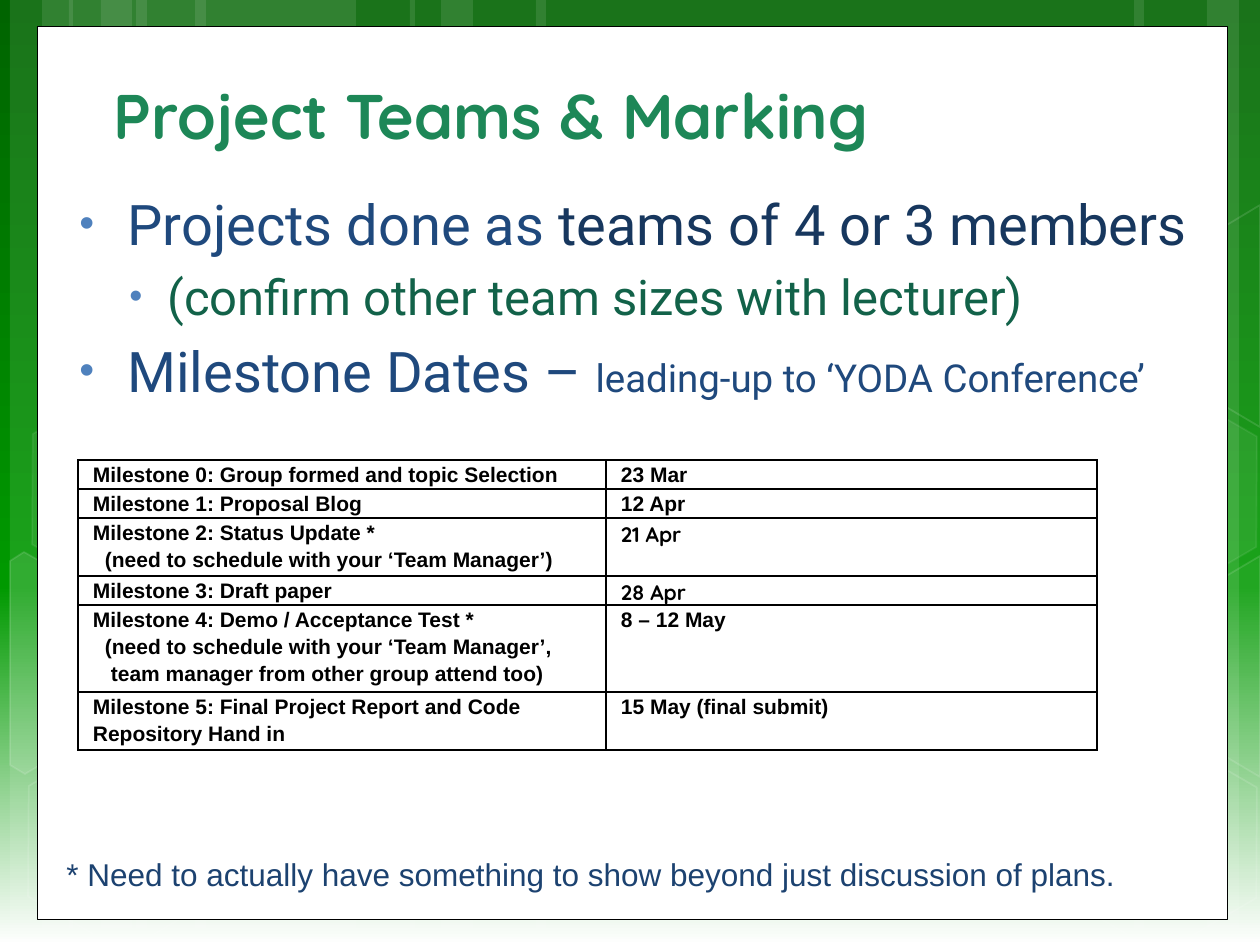
from lxml import etree
from pptx import Presentation, util as u
from pptx.dml import color
from pptx.enum import shapes, text
from pptx.oxml import ns

EMU = 914400 / 126
WHITE = "FFFFFF"

BARS = [(136, 220), (10, 63), (42, 105), (195, 220), (69, 63), (101, 105),
        (924, 220), (1207, 53), (1134, 105), (536, 388), (410, 63), (441, 105)]
HEXAGONS = [(14, 745, 0, 12), (18, 393, 7, 8), (1051, 747, 0, 12), (1051, 396, 7, 8)]
CUT_HEXAGONS = [
    ([(10, 561), (24, 552), (121, 607), (120, 718), (25, 774), (10, 765)], 10),
    ([(1167, 611), (1260, 556), (1260, 777), (1167, 722)], 4),
    ([(1167, 261), (1260, 205), (1260, 427), (1167, 372)], 0),
]
BULLETS = [
    (0, 32, [("Projects done as ", "1F497D", 32), ("teams of 4 or 3 members", "17375E", 32)]),
    (1, 28, [("(confirm other team sizes with lecturer)", "126249", 28)]),
    (0, 32, [("Milestone Dates – ", "1F497D", 32),
             ("leading-up to ‘YODA Conference’", "1F497D", 22)]),
]
MILESTONES = [
    (["Milestone 0: Group formed and topic Selection"], "23 Mar", "Arial", 1),
    (["Milestone 1: Proposal Blog"], "12 Apr", "Arial", 1),
    (["Milestone 2: Status Update *", "(need to schedule with your ‘Team Manager’)"],
     "21 Apr", "Quicksand", 2),
    (["Milestone 3: Draft paper"], "28 Apr", "Quicksand", 1),
    (["Milestone 4: Demo / Acceptance Test *", "(need to schedule with your ‘Team Manager’,",
      "team manager from other group attend too)"], "8 – 12 May", "Arial", 3),
    (["Milestone 5: Final Project Report and Code Repository Hand in"],
     "15 May (final submit)", "Arial", 2),
]


def px(n):
    """Turn pixels into EMU."""
    return u.Emu(round(n * EMU))


def rgb(value):
    """Turn a hex string into a colour."""
    return color.RGBColor.from_string(value)


def child(parent, tag, **attrs):
    """Append a DrawingML element."""
    el = etree.SubElement(parent, ns.qn(tag))
    for key, value in attrs.items():
        el.set(key, str(value))
    return el


def style(sp, fill=None, line=None, width=1, opacity=()):
    """Set fill, line and the opacity percentages of the colours used, in order."""
    sp.shadow.inherit = False
    for part, value in ((sp.fill, fill), (sp.line.fill, line)):
        if value:
            part.solid()
            part.fore_color.rgb = rgb(value)
        else:
            part.background()
    if line:
        sp.line.width = u.Pt(width)
    colors = sp.element.spPr.iter(ns.qn("a:srgbClr"))
    for el, percent in zip(list(colors), opacity):
        child(el, "a:alpha", val=percent * 1000)


def set_font(target, name, size, value, bold=False):
    """Format the font of a paragraph or run."""
    f = target.font
    f.name, f.size, f.bold = name, u.Pt(size), bold
    f.color.rgb = rgb(value)


def add_box(s, kind, x, y, w, h):
    """Add a preset shape."""
    return s.shapes.add_shape(kind, px(x), px(y), px(w), px(h))


def add_polygon(s, points):
    """Add a closed outline through points."""
    fb = s.shapes.build_freeform(*points[0], scale=EMU)
    fb.add_line_segments(points[1:], close=True)
    return fb.convert_to_shape()


def add_backdrop(s, w, h):
    """Draw the green gradient, the translucent pattern and the white panel."""
    fill = s.background.fill
    fill.gradient()
    fill.gradient_angle = 270
    stops = s.element.find(".//" + ns.qn("a:gsLst"))
    for el in list(stops):
        stops.remove(el)
    for pos, value in ((0, "006400"), (62, "009900"), (100, WHITE)):
        child(child(stops, "a:gs", pos=pos * 1000), "a:srgbClr", val=value)
    for x, width in BARS:
        style(add_box(s, shapes.MSO_SHAPE.RECTANGLE, x, 0, width, h), WHITE, opacity=[10])
    outlines = []
    for x, y, tint, edge in HEXAGONS:
        sp = add_box(s, shapes.MSO_SHAPE.HEXAGON, x, y, 220, 192)
        sp.rotation = 30
        sp.adjustments[0] = 0.285
        outlines.append((sp, tint, edge))
    outlines += [(add_polygon(s, points), tint, 12) for points, tint in CUT_HEXAGONS]
    for sp, tint, edge in outlines:
        style(sp, WHITE if tint else None, WHITE, 1, [tint, edge] if tint else [edge])
    style(add_box(s, shapes.MSO_SHAPE.RECTANGLE, 37, 27, w - 70, h - 52), WHITE, "000000", 0.5)


def add_title(s, x, y, w, h):
    """Place and format the title in front of the panel."""
    sp = s.shapes.title
    s.shapes.element.append(sp.element)
    sp.left, sp.top, sp.width, sp.height = px(x), px(y), px(w), px(h)
    tf = sp.text_frame
    tf.text = "Project Teams & Marking"
    tf.vertical_anchor = text.MSO_ANCHOR.BOTTOM
    p = tf.paragraphs[0]
    p.alignment = text.PP_ALIGN.LEFT
    set_font(p, "Quicksand", 36, "1D8757", True)


def add_bullets(s, x, y, w, h):
    """Write the bulleted list."""
    tf = s.shapes.add_textbox(px(x), px(y), px(w), px(h)).text_frame
    tf.word_wrap = True
    for i, (level, size, runs) in enumerate(BULLETS):
        p = tf.add_paragraph() if i else tf.paragraphs[0]
        p.level = level
        p.space_before = u.Pt(size * 0.2)
        pPr = p._p.get_or_add_pPr()
        left, hang = ((48, 48), (88, 38))[level]
        pPr.set("marL", str(px(left)))
        pPr.set("indent", str(-px(hang)))
        child(child(pPr, "a:buClr"), "a:srgbClr", val="4F81BD")
        child(pPr, "a:buSzPct", val=76000)
        child(pPr, "a:buFont", typeface="Arial")
        child(pPr, "a:buChar", char="•")
        for words, value, points in runs:
            r = p.add_run()
            r.text = words
            set_font(r, "Roboto", points, value)


def fill_cell(cell, lines, font):
    """Write the lines of a cell and draw its borders."""
    cell.margin_left = cell.margin_right = px(9)
    cell.margin_top = cell.margin_bottom = 0
    tf = cell.text_frame
    for i, (line, extra) in enumerate(zip(lines, (0, 12, 18))):
        p = tf.add_paragraph() if i else tf.paragraphs[0]
        p.text = line
        p.line_spacing = 1.15
        p._p.get_or_add_pPr().set("marL", str(px(6 + extra)))
        set_font(p, font, 12, "000000", True)
    tcPr = cell._tc.get_or_add_tcPr()
    for side in ("a:lnL", "a:lnR", "a:lnT", "a:lnB"):
        ln = child(tcPr, side, w=u.Pt(1))
        child(child(ln, "a:solidFill"), "a:srgbClr", val="000000")
    cell.fill.solid()
    cell.fill.fore_color.rgb = rgb(WHITE)


def add_milestones(s, x, y, widths, line_height):
    """Build the table of milestones and dates."""
    height = line_height * sum(m[3] for m in MILESTONES)
    table = s.shapes.add_table(len(MILESTONES), 2, px(x), px(y), px(sum(widths)),
                               px(height)).table
    table.first_row = table.horz_banding = False
    for col, width in zip(table.columns, widths):
        col.width = px(width)
    for i, (lines, date, font, count) in enumerate(MILESTONES):
        table.rows[i].height = px(line_height * count)
        fill_cell(table.cell(i, 0), lines, "Arial")
        fill_cell(table.cell(i, 1), [date], font)


def add_footnote(s, x, y, w, h):
    """Write the note below the table."""
    tf = s.shapes.add_textbox(px(x), px(y), px(w), px(h)).text_frame
    tf.word_wrap = False
    p = tf.paragraphs[0]
    p.text = "* Need to actually have something to show beyond just discussion of plans."
    set_font(p, "Arial", 18, "1C4270")


def main():
    """Build and save the slide."""
    prs = Presentation()
    prs.slide_width, prs.slide_height = px(1260), px(945)
    s = prs.slides.add_slide(prs.slide_layouts[5])
    add_backdrop(s, 1260, 945)
    add_title(s, 101, 62, 1061, 96)
    add_bullets(s, 67, 183, 1145, 611)
    add_milestones(s, 78, 460, (528, 491), 29)
    add_footnote(s, 54, 849, 1084, 50)
    prs.save("out.pptx")


if __name__ == "__main__":
    main()
